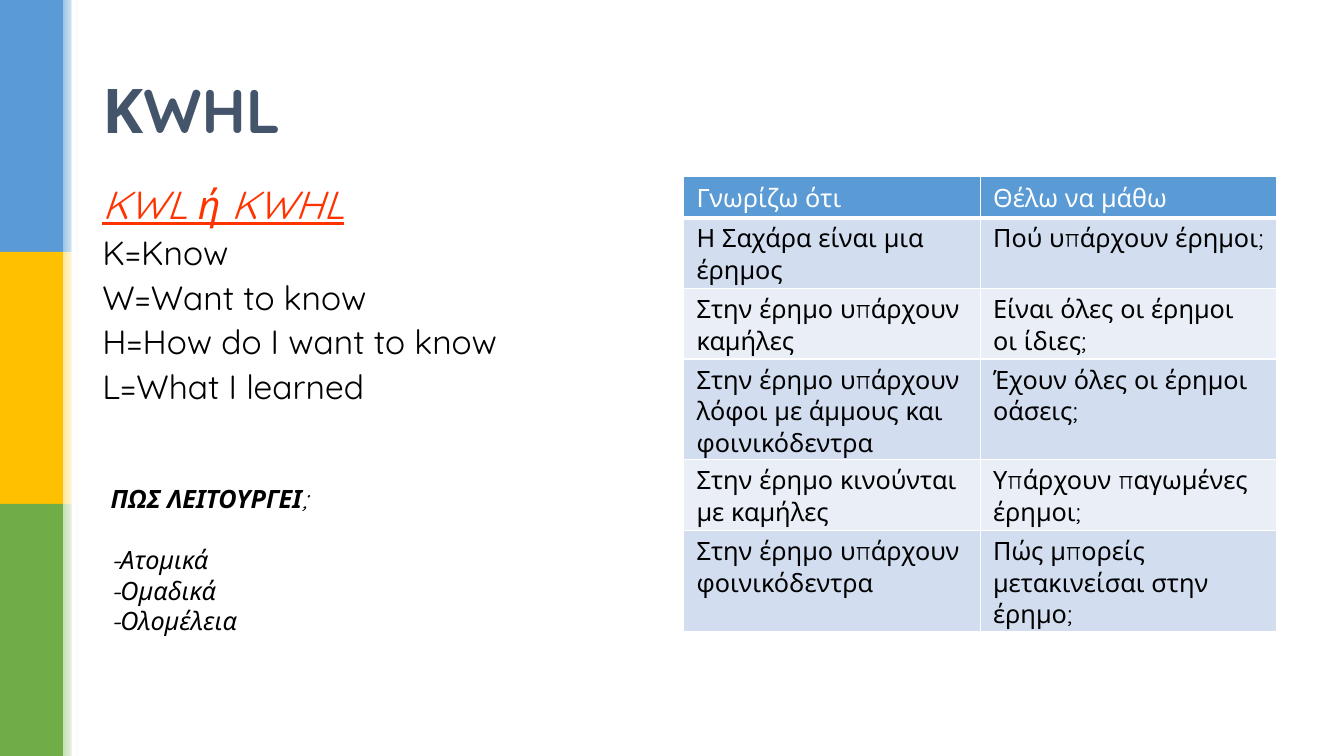
from dataclasses import dataclass

from lxml.etree import SubElement
from pptx import Presentation
from pptx.dml.color import RGBColor
from pptx.enum.shapes import MSO_SHAPE as Shape
from pptx.enum.text import MSO_ANCHOR as Anchor, MSO_AUTO_SIZE as AutoSize, PP_ALIGN as Align
from pptx.oxml.ns import qn
from pptx.util import Pt

FONT = "Quicksand"
BLACK, WHITE = "000000", "FFFFFF"
HEADER_FILL, ROW_FILLS = "5B9BD5", ("D2DEEF", "EAEFF7")


@dataclass
class Band:
    color: str
    tint: str


@dataclass
class Line:
    text: str
    size: float
    color: str = BLACK
    italic: bool = False
    underline: bool = False
    before: float = 0


BANDS = [Band("5B9BD5", "9DC3E6"), Band("FFC000", "FFE699"), Band("70AD47", "C5E0B4")]
BAND_W, BAND_H, TINT_W = 45, 180, 11.5

KWHL_LINES = [
    Line("KWL ή KWHL", 28, "FF3300", True, True),
    Line("K=Know", 24, before=6),
    Line("W=Want to know", 24, before=6),
    Line("H=How do I want to know", 24, before=6),
    Line("L=What I learned", 24, before=6),
]
STEP_LINES = [
    Line("ΠΩΣ ΛΕΙΤΟΥΡΓΕΙ", 18, italic=True),
    Line("-Ατομικά", 18, italic=True, before=22),
    Line("-Ομαδικά", 18, italic=True),
    Line("-Ολομέλεια", 18, italic=True),
]
DESERT_ROWS = [
    ("Γνωρίζω ότι", "Θέλω να μάθω"),
    ("Η Σαχάρα είναι μια έρημος", "Πού υπάρχουν έρημοι;"),
    ("Στην έρημο υπάρχουν καμήλες", "Είναι όλες οι έρημοι οι ίδιες;"),
    ("Στην έρημο υπάρχουν λόφοι με άμμους και φοινικόδεντρα", "Έχουν όλες οι έρημοι οάσεις;"),
    ("Στην έρημο κινούνται με καμήλες", "Υπάρχουν παγωμένες έρημοι;"),
    ("Στην έρημο υπάρχουν φοινικόδεντρα", "Πώς μπορείς μετακινείσαι στην έρημο;"),
]


def rgb(color: str) -> RGBColor:
    return RGBColor.from_string(color)


def set_font(font, size: float, color: str) -> None:
    font.name, font.size = FONT, Pt(size)
    font.color.rgb = rgb(color)


def add_rect(slide, x: float, y: float, w: float, h: float, color: str, fade_to: str = ""):
    sp = slide.shapes.add_shape(Shape.RECTANGLE, Pt(x), Pt(y), Pt(w), Pt(h))
    sp.shadow.inherit = False
    sp.line.fill.background()
    if fade_to:
        sp.fill.gradient()
        sp.fill.gradient_angle = 0
        for stop, stop_color in zip(sp.fill.gradient_stops, (color, fade_to)):
            stop.color.rgb = rgb(stop_color)
    else:
        sp.fill.solid()
        sp.fill.fore_color.rgb = rgb(color)
    return sp


def add_lines(slide, x: float, y: float, w: float, h: float, lines: list[Line], spacing: float = 1.0):
    tf = slide.shapes.add_textbox(Pt(x), Pt(y), Pt(w), Pt(h)).text_frame
    tf.word_wrap = True
    for i, line in enumerate(lines):
        p = tf.add_paragraph() if i else tf.paragraphs[0]
        p.text = line.text
        p.line_spacing = spacing
        if line.before:
            p.space_before = Pt(line.before)
        set_font(p.font, line.size, line.color)
        p.font.italic, p.font.underline = line.italic, line.underline
    return tf


def set_borders(cell, bottom: float) -> None:
    tc_pr = cell._tc.get_or_add_tcPr()
    for side, width in (("L", 1), ("R", 1), ("T", 1), ("B", bottom)):
        ln = SubElement(tc_pr, qn(f"a:ln{side}"), w=str(Pt(width)))
        fill = SubElement(ln, qn("a:solidFill"))
        SubElement(fill, qn("a:srgbClr"), val=WHITE)


def add_desert_table(slide, x: float, y: float, col_w: float, row_h: float) -> None:
    rows, cols = len(DESERT_ROWS), len(DESERT_ROWS[0])
    table = slide.shapes.add_table(
        rows, cols, Pt(x), Pt(y), Pt(col_w * cols), Pt(row_h * rows)).table
    for i, texts in enumerate(DESERT_ROWS):
        for j, text in enumerate(texts):
            cell = table.cell(i, j)
            cell.margin_left = cell.margin_right = Pt(9.2)
            cell.margin_top = cell.margin_bottom = Pt(3.6)
            set_borders(cell, 1 if i else 3)
            cell.fill.solid()
            cell.fill.fore_color.rgb = rgb(ROW_FILLS[(i - 1) % 2] if i else HEADER_FILL)
            p = cell.text_frame.paragraphs[0]
            p.text = text
            set_font(p.font, 18, BLACK if i else WHITE)
            p.font.bold = False


def add_title(slide) -> None:
    title = slide.shapes.title
    title.left, title.top, title.width, title.height = Pt(66), Pt(28.8), Pt(828), Pt(104.4)
    tf = title.text_frame
    tf.auto_size, tf.vertical_anchor = AutoSize.NONE, Anchor.MIDDLE
    p = tf.paragraphs[0]
    p.text, p.alignment, p.line_spacing = "ΚWHL", Align.LEFT, 0.9
    set_font(p.font, 44, "44546A")
    p.font.bold = True


def main() -> None:
    prs = Presentation()
    prs.slide_width, prs.slide_height = Pt(960), Pt(540)
    slide = prs.slides.add_slide(prs.slide_layouts[5])

    for i, band in enumerate(BANDS):
        add_rect(slide, 0, i * BAND_H, BAND_W, BAND_H, band.color)
        add_rect(slide, BAND_W, i * BAND_H, TINT_W, BAND_H, band.tint, WHITE)
    add_rect(slide, 51.2, 0, 3.6, 540, WHITE)

    add_title(slide)
    add_lines(slide, 66, 129, 328, 163.5, KWHL_LINES, 0.9)
    add_desert_table(slide, 488.4, 126.3, 211.8, 29.2)

    steps = add_lines(slide, 72, 342, 247.7, 116.6, STEP_LINES)
    heading = steps.paragraphs[0]
    heading.runs[0].font.bold = True
    heading.add_run().text = ";"

    prs.save("out.pptx")


if __name__ == "__main__":
    main()
